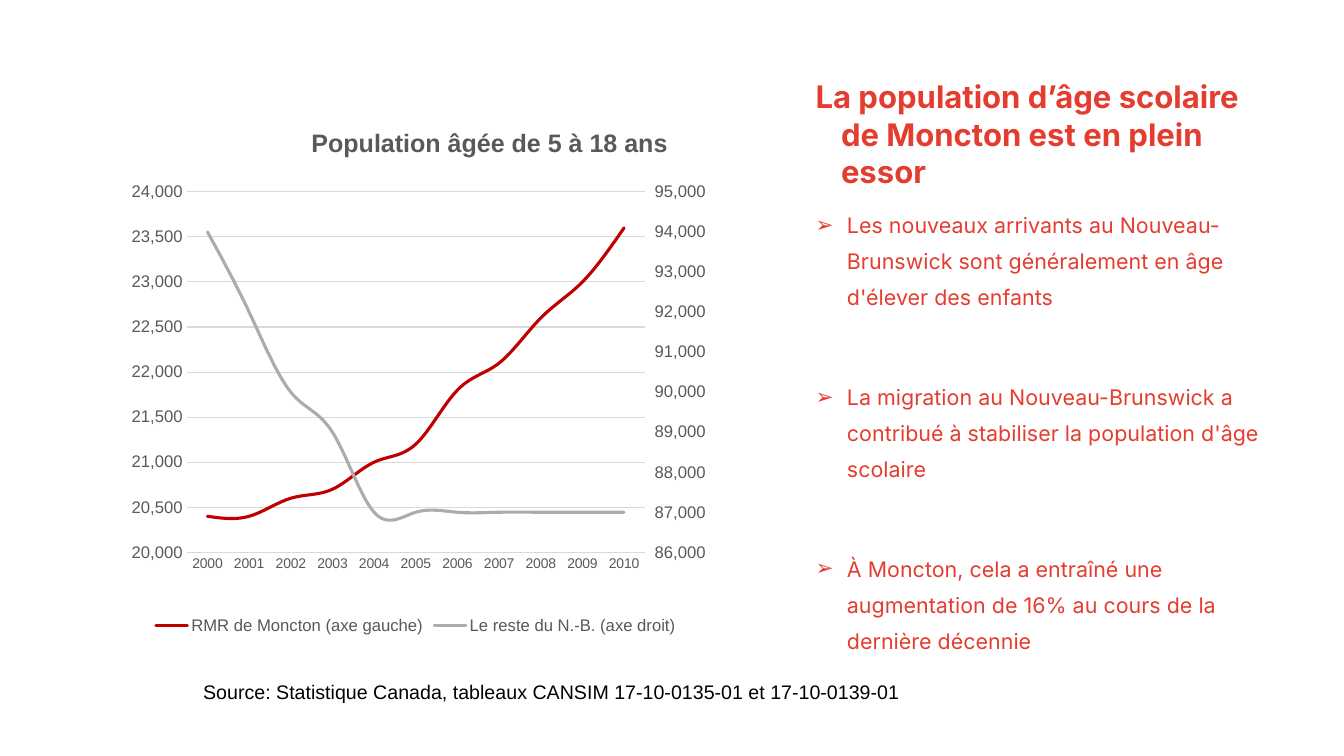
import copy

import lxml.etree
import pptx
import pptx.chart.data
import pptx.dml.color
import pptx.enum.chart
import pptx.enum.text
import pptx.oxml.ns
import pptx.util

Cm = pptx.util.Cm
Pt = pptx.util.Pt
qn = pptx.oxml.ns.qn
enum = pptx.enum.chart

COLORS = {"red": "E43D30", "line": "C00000", "gray": "AFABAB",
          "label": "595959", "grid": "D9D9D9", "black": "000000"}
POINTS = [
    "Les nouveaux arrivants au Nouveau-Brunswick sont généralement en âge d'élever des enfants",
    "La migration au Nouveau-Brunswick a contribué à stabiliser la population d'âge scolaire",
    "À Moncton, cela a entraîné une augmentation de 16% au cours de la dernière décennie",
]
SERIES = {
    "RMR de Moncton (axe gauche)": (
        "line", [20400, 20400, 20600, 20700, 21000, 21200, 21800, 22100, 22600, 23000, 23600]),
    "Le reste du N.-B. (axe droit)": (
        "gray", [94000, 92000, 90000, 89000, 87000, 87000, 87000, 87000, 87000, 87000, 87000]),
}


def tint(name):
    return pptx.dml.color.RGBColor.from_string(COLORS[name])


def apply(item, **values):
    for key, value in values.items():
        setattr(item, key, value)


def style(font, color, size, face, bold=False):
    apply(font, size=Pt(size), name=face, bold=bold)
    font.color.rgb = tint(color)


def place(shape, box):
    apply(shape, **dict(zip(("left", "top", "width", "height"), box)))


def frame(shape):
    text = shape.text_frame
    apply(text, word_wrap=True, auto_size=pptx.enum.text.MSO_AUTO_SIZE.NONE,
          vertical_anchor=pptx.enum.text.MSO_ANCHOR.TOP)
    return text


def write(para, text, indent, hang, before, spacing, **font):
    apply(para, alignment=pptx.enum.text.PP_ALIGN.LEFT, line_spacing=spacing,
          space_before=Pt(before), space_after=Pt(0))
    props = para._p.get_or_add_pPr()
    props.set("marL", str(indent))
    props.set("indent", str(-hang))
    run = para.add_run()
    run.text = text
    style(run.font, **font)


def bullet(para):
    props = para._p.get_or_add_pPr()
    color = lxml.etree.SubElement(props, qn("a:buClr"))
    lxml.etree.SubElement(color, qn("a:srgbClr"), val=COLORS["red"])
    lxml.etree.SubElement(props, qn("a:buFont"), typeface="Arial")
    lxml.etree.SubElement(props, qn("a:buChar"), char="➢")


def heading(shape, box):
    place(shape, box)
    write(frame(shape).paragraphs[0],
          "La population d’âge scolaire de Moncton est en plein essor",
          Cm(1.27), Cm(0.64), 0, 1.0, color="red", size=22.2, face="Inter", bold=True)


def bullets(shape, box):
    place(shape, box)
    text = frame(shape)
    for index, point in enumerate(POINTS):
        para = text.add_paragraph() if index else text.paragraphs[0]
        write(para, point, Cm(1.42), Cm(0.79), 45.7 if index else 0, 1.4,
              color="red", size=15.3, face="Inter")
        bullet(para)


def source(slide, box):
    text = frame(slide.shapes.add_textbox(*box))
    write(text.paragraphs[0],
          "Source: Statistique Canada, tableaux CANSIM 17-10-0135-01 et 17-10-0139-01",
          0, 0, 0, 1.0, color="black", size=14, face="Arial")


def layout(parent, index, **values):
    """Fix a chart part at fractions of the chart area."""
    for old in parent.findall(qn("c:layout")):
        parent.remove(old)
    outer = lxml.etree.Element(qn("c:layout"))
    manual = lxml.etree.SubElement(outer, qn("c:manualLayout"))
    for key, value in values.items():
        lxml.etree.SubElement(manual, qn("c:" + key), val=str(value))
    parent.insert(index, outer)


def right_axis(chart):
    """Move the second series to its own axis on the right."""
    area = chart._chartSpace.chart.plotArea
    left = area.find(qn("c:lineChart"))
    right = copy.deepcopy(left)
    left.remove(left.findall(qn("c:ser"))[1])
    right.remove(right.findall(qn("c:ser"))[0])
    left.addnext(right)
    cat, val = (copy.deepcopy(area.find(qn(tag))) for tag in ("c:catAx", "c:valAx"))
    for axis, own, cross in ((cat, "501", "502"), (val, "502", "501")):
        axis.find(qn("c:axId")).set("val", own)
        axis.find(qn("c:crossAx")).set("val", cross)
    for ref, own in zip(right.findall(qn("c:axId")), ("501", "502")):
        ref.set("val", own)
    cat.find(qn("c:delete")).set("val", "1")
    val.remove(val.find(qn("c:majorGridlines")))
    changes = {"c:axPos": "r", "c:majorTickMark": "out", "c:crosses": "max",
               "c:majorUnit": "1000", "c:scaling/c:min": "86000", "c:scaling/c:max": "95000"}
    for route, value in changes.items():
        val.find("/".join(qn(tag) for tag in route.split("/"))).set("val", value)
    area.findall(qn("c:valAx"))[-1].addnext(val)
    val.addnext(cat)


def graph(slide, box):
    data = pptx.chart.data.CategoryChartData(number_format="#,##0")
    data.categories = [str(year) for year in range(2000, 2011)]
    for name, (_, values) in SERIES.items():
        data.add_series(name, values)
    chart = slide.shapes.add_chart(enum.XL_CHART_TYPE.LINE, *box, data).chart
    style(chart.font, "black", 10, "Arial")

    chart.has_title = True
    run = chart.chart_title.text_frame.paragraphs[0].add_run()
    run.text = "Population âgée de 5 à 18 ans"
    style(run.font, "label", 18, "Arial", True)
    chart.chart_title.include_in_layout = False
    layout(chart.chart_title._element, 1, xMode="edge", yMode="edge", x=0.31, y=0.04)

    chart.has_legend = True
    apply(chart.legend, position=enum.XL_LEGEND_POSITION.BOTTOM, include_in_layout=False)
    style(chart.legend.font, "label", 12, "Arial")

    years, people = chart.category_axis, chart.value_axis
    for axis, size in ((years, 10), (people, 12)):
        apply(axis, major_tick_mark=enum.XL_TICK_MARK.NONE,
              minor_tick_mark=enum.XL_TICK_MARK.NONE)
        style(axis.tick_labels.font, "label", size, "Arial")
    apply(people, minimum_scale=20000, maximum_scale=24000, major_unit=500,
          has_major_gridlines=True)
    apply(people.tick_labels, number_format="#,##0", number_format_is_linked=False)
    people.format.line.fill.background()
    for part in (years, people.major_gridlines):
        part.format.line.width = Pt(0.75)
        part.format.line.color.rgb = tint("grid")

    chart.plots[0].vary_by_categories = False
    for series in chart.plots[0].series:
        series.smooth = True
        series.marker.style = enum.XL_MARKER_STYLE.NONE
        series.format.line.width = Pt(2.25)
        series.format.line.color.rgb = tint(SERIES[series.name][0])
        series._element.find(qn("c:spPr")).find(qn("a:ln")).set("cap", "rnd")
    right_axis(chart)
    layout(chart._chartSpace.chart.plotArea, 0, layoutTarget="inner", xMode="edge",
           yMode="edge", x=0.1, y=0.17, w=0.8, h=0.67)


def main():
    deck = pptx.Presentation()
    apply(deck, slide_width=Cm(33.87), slide_height=Cm(19.05))
    slide = deck.slides.add_slide(deck.slide_layouts[1])
    heading(slide.shapes.title, (Cm(19.67), Cm(1.83), Cm(12.93), Cm(3.12)))
    bullets(slide.placeholders[1], (Cm(19.67), Cm(4.95), Cm(13.39), Cm(12.14)))
    source(slide, (Cm(4.87), Cm(17.01), Cm(23.77), Cm(0.86)))
    graph(slide, (Cm(3.26), Cm(2.53), Cm(14.53), Cm(13.56)))
    deck.save("out.pptx")


if __name__ == "__main__":
    main()
